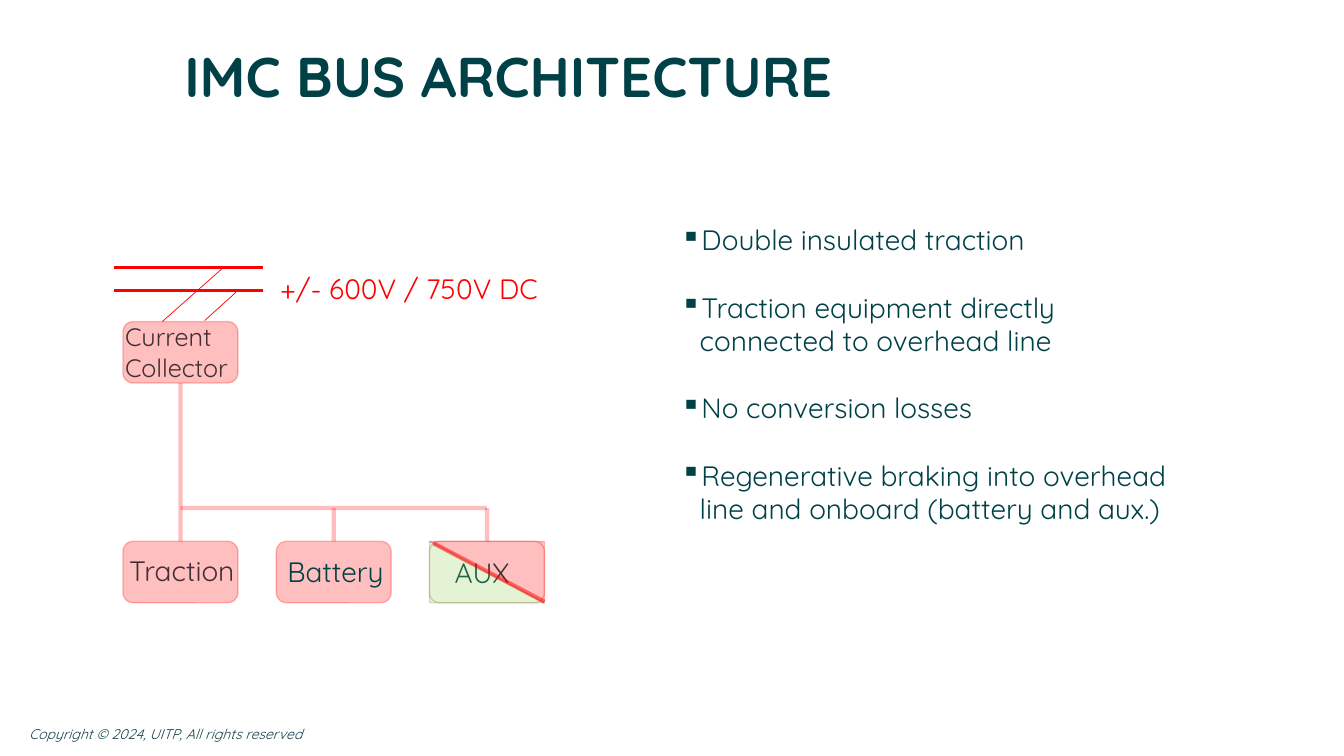
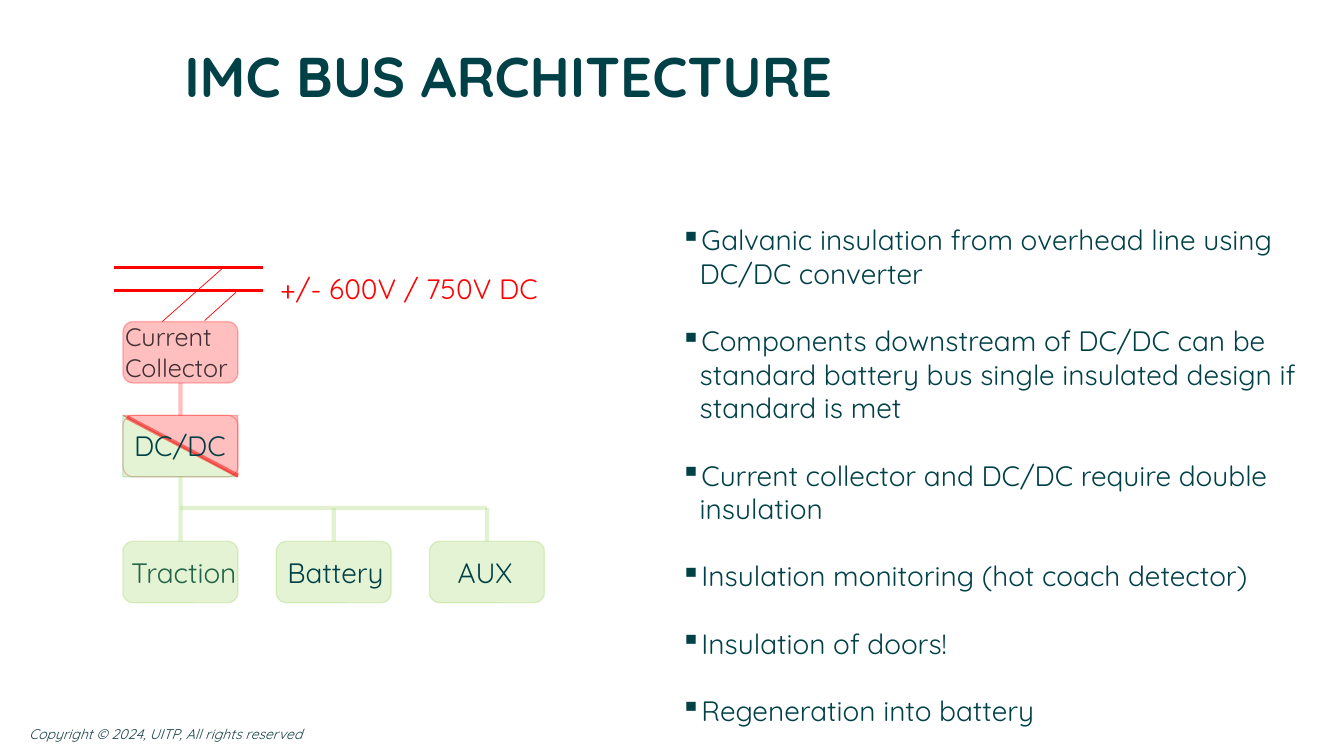
from lxml import etree
from pptx import Presentation
from pptx.dml.color import RGBColor
from pptx.enum.shapes import MSO_CONNECTOR, MSO_SHAPE
from pptx.enum.text import MSO_AUTO_SIZE
from pptx.oxml.ns import qn
from pptx.util import Emu, Pt

PX = 9144
TEAL = RGBColor(0x00, 0x40, 0x47)
SLATE = RGBColor(0x18, 0x42, 0x49)
RED = RGBColor(0xFF, 0x00, 0x00)
LIME = RGBColor(0x92, 0xD0, 0x50)
GREEN = RGBColor(0x00, 0xB0, 0x50)

STRAIGHT = MSO_CONNECTOR.STRAIGHT
ROUNDED = MSO_SHAPE.FLOWCHART_ALTERNATE_PROCESS
TRIANGLE = MSO_SHAPE.RIGHT_TRIANGLE
GROW = MSO_AUTO_SIZE.SHAPE_TO_FIT_TEXT
FIXED = MSO_AUTO_SIZE.NONE
TOP, BOTTOM = 0, 2

FONT = "Quicksand"
TITLE_FORMAT = {"name": FONT, "size": Pt(40), "bold": True}
FOOTER_FORMAT = {"name": FONT, "size": Pt(10), "italic": True}
BODY_FORMAT = {"name": FONT, "size": Pt(20)}
SMALL_FORMAT = {"name": FONT, "size": Pt(18)}
WIDE_INSET = (10, 5)
NARROW_INSET = (8, 4)

BLOCK_WIDTH, BLOCK_HEIGHT = 114, 61
TRACTION_LEFT, BATTERY_LEFT, AUX_LEFT = (122 + 152 * i for i in range(3))
COLLECTOR_TOP, CONVERTER_TOP, ROW_TOP = 319, 412, 537
BUS_Y = 504

DIRECT_POINTS = [
    "Double insulated traction",
    "Traction equipment directly connected to overhead line",
    "No conversion losses",
    "Regenerative braking into overhead line and onboard (battery and aux.)",
]
CONVERTER_POINTS = [
    "Galvanic insulation from overhead line using DC/DC converter",
    "Components downstream of DC/DC can be standard battery bus single insulated design if standard is met",
    "Current collector and DC/DC require double insulation",
    "Insulation monitoring (hot coach detector)",
    "Insulation of doors!",
    "Regeneration into battery",
]


def px(*lengths):
    return [Emu(length * PX) for length in lengths]


def fade(shape, percent):
    for colour in shape._element.spPr.iter(qn("a:srgbClr")):
        etree.SubElement(colour, qn("a:alpha"), val=str(percent * 1000))


def add_bullet(paragraph):
    properties = paragraph._p.get_or_add_pPr()
    indent = 19 * PX
    properties.set("marL", str(indent))
    properties.set("indent", str(-indent))
    bullet_colour = etree.SubElement(properties, qn("a:buClr"))
    etree.SubElement(bullet_colour, qn("a:srgbClr"), val=str(TEAL))
    etree.SubElement(properties, qn("a:buChar"), char="▪")


def add_text(slide, box, lines, text_format, colour=TEAL, inset=NARROW_INSET,
             wrap=False, bulleted=False, fit=GROW):
    frame = slide.shapes.add_textbox(*px(*box)).text_frame
    side, end = px(*inset)
    settings = {"word_wrap": wrap, "auto_size": fit, "margin_left": side,
                "margin_right": side, "margin_top": end, "margin_bottom": end}
    for name, value in settings.items():
        setattr(frame, name, value)
    for index, line in enumerate(lines):
        paragraph = frame.add_paragraph() if index else frame.paragraphs[0]
        if bulleted:
            add_bullet(paragraph)
            if index:
                paragraph.space_before = Pt(24)
        run = paragraph.add_run()
        run.text = line
        for name, value in text_format.items():
            setattr(run.font, name, value)
        run.font.color.rgb = colour


def add_line(slide, start, end, colour, width, opacity=100,
             begin_block=None, end_block=None):
    line = slide.shapes.add_connector(STRAIGHT, *px(*start, *end))
    if begin_block is not None:
        line.begin_connect(begin_block, BOTTOM)
    if end_block is not None:
        line.end_connect(end_block, TOP)
    line.line.color.rgb = colour
    line.line.width = Pt(width)
    etree.SubElement(line._element.spPr, qn("a:effectLst"))
    if opacity < 100:
        fade(line, opacity)


def add_area(slide, preset, left, top, fill, outline, width):
    area = slide.shapes.add_shape(
        preset, *px(left, top, BLOCK_WIDTH, BLOCK_HEIGHT))
    area.shadow.inherit = False
    if fill is None:
        area.fill.background()
    else:
        area.fill.solid()
        area.fill.fore_color.rgb = fill
    area.line.color.rgb = outline
    area.line.width = Pt(width)
    fade(area, 25)
    return area


def add_block(slide, left, top, colour):
    return add_area(slide, ROUNDED, left, top, colour, colour, 1)


def add_split_block(slide, left, top):
    block = add_area(slide, ROUNDED, left, top, None, RED, 1)
    add_area(slide, TRIANGLE, left, top, LIME, GREEN, 0.75)
    high_voltage = add_area(slide, TRIANGLE, left, top, RED, RED, 0.75)
    high_voltage.rotation = 180
    add_line(slide, (left + 4, top + 2),
             (left + BLOCK_WIDTH, top + BLOCK_HEIGHT - 1), RED, 3, 50)
    return block


def add_label(slide, left, top, width, text):
    add_text(slide, (left, top, width, 42), [text], BODY_FORMAT)


def add_link(slide, upper, lower, colour):
    add_line(slide, (0, 0), (0, 0), colour, 3, 25, upper, lower)


def add_bus(slide, battery, aux, colour):
    trunk, battery_x, aux_x = (left + BLOCK_WIDTH // 2 for left in
                               (TRACTION_LEFT, BATTERY_LEFT, AUX_LEFT))
    add_line(slide, (aux_x, BUS_Y), (trunk, BUS_Y), colour, 3, 25)
    for x, block in ((battery_x, battery), (aux_x, aux)):
        add_line(slide, (x, BUS_Y), (x, ROW_TOP), colour, 3, 25,
                 end_block=block)


def add_overhead_supply(slide):
    for y in (265, 288):
        add_line(slide, (113, y), (261, y), RED, 2)
    for start, end in (((222, 265), (161, 319)), ((234, 290), (203, 318))):
        add_line(slide, start, end, RED, 0.5)
    add_text(slide, (270, 265, 274, 42), ["+/- 600V / 750V DC"],
             BODY_FORMAT, RED)
    add_text(slide, (116, 315, 128, 69), ["Current", "Collector"],
             SMALL_FORMAT)
    return add_block(slide, TRACTION_LEFT, COLLECTOR_TOP, RED)


def add_base_slide(presentation, points, points_width):
    slide = presentation.slides.add_slide(presentation.slide_layouts[6])
    add_text(slide, (19, 715, 661, 27),
             ["Copyright © 2024, UITP, All rights reserved"],
             FOOTER_FORMAT, SLATE, WIDE_INSET, wrap=True)
    add_text(slide, (173, 36, 1200 - 40, 72), ["IMC BUS ARCHITECTURE"],
             TITLE_FORMAT, inset=WIDE_INSET, wrap=True, fit=FIXED)
    add_text(slide, (667, 217, points_width, 311), points, BODY_FORMAT,
             wrap=True, bulleted=True)
    return slide


def build_direct_slide(presentation):
    slide = add_base_slide(presentation, DIRECT_POINTS, 526)
    collector = add_overhead_supply(slide)
    add_label(slide, 120, 545, 124, "Traction")
    traction = add_block(slide, TRACTION_LEFT, ROW_TOP, RED)
    battery = add_block(slide, BATTERY_LEFT, ROW_TOP, RED)
    add_label(slide, 277, 546, 112, "Battery")
    add_label(slide, 443, 547, 72, "AUX")
    aux = add_split_block(slide, AUX_LEFT, ROW_TOP)
    add_link(slide, collector, traction, RED)
    add_bus(slide, battery, aux, RED)


def build_converter_slide(presentation):
    slide = add_base_slide(presentation, CONVERTER_POINTS, 629)
    collector = add_overhead_supply(slide)
    add_label(slide, 122, 547, 124, "Traction")
    traction = add_block(slide, TRACTION_LEFT, ROW_TOP, LIME)
    battery = add_block(slide, BATTERY_LEFT, ROW_TOP, LIME)
    add_label(slide, 277, 547, 112, "Battery")
    aux = add_block(slide, AUX_LEFT, ROW_TOP, LIME)
    add_label(slide, 446, 547, 72, "AUX")
    converter = add_split_block(slide, TRACTION_LEFT, CONVERTER_TOP)
    add_label(slide, 125, 421, 115, "DC/DC")
    add_link(slide, collector, converter, RED)
    add_link(slide, converter, traction, LIME)
    add_bus(slide, battery, aux, LIME)


def main():
    presentation = Presentation()
    presentation.slide_width, presentation.slide_height = px(1333, 750)
    build_direct_slide(presentation)
    build_converter_slide(presentation)
    presentation.save("out.pptx")


if __name__ == "__main__":
    main()
